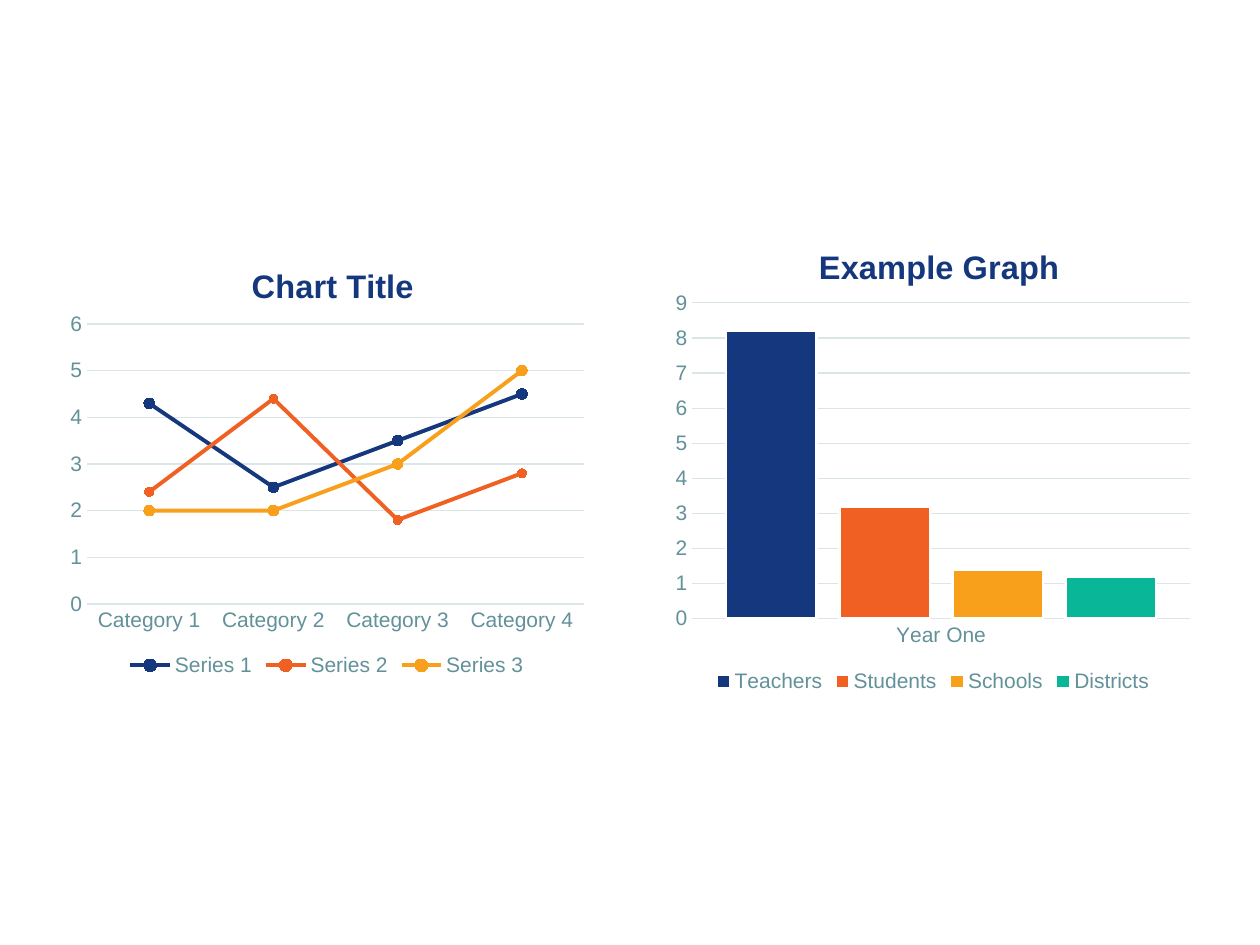
"""Builds a slide with a line chart and a column chart side by side."""
from lxml import etree
from pptx import Presentation
from pptx import util as u
from pptx.chart import data as cd
from pptx.dml import color as co
from pptx.enum import chart as ec
from pptx.oxml import ns

Pt = u.Pt
NAVY = co.RGBColor(0x14, 0x37, 0x7D)
ORANGE = co.RGBColor(0xF0, 0x60, 0x22)
AMBER = co.RGBColor(0xF8, 0x9F, 0x1B)
GREEN = co.RGBColor(0x09, 0xB6, 0x98)
TEAL = co.RGBColor(0x62, 0x91, 0x9A)
PALE = co.RGBColor(0xDB, 0xE6, 0xE8)
DARK = co.RGBColor(0x2C, 0x41, 0x45)
WHITE = co.RGBColor(0xFF, 0xFF, 0xFF)
HUES = [NAVY, ORANGE, AMBER, GREEN]


def style(font, size, hue, name="Arial", bold=False):
    font.size, font.name, font.bold = Pt(size), name, bold
    font.color.rgb = hue


def place(owner, index, pairs):
    layout = owner.find(ns.qn("c:layout"))
    if layout is None:
        layout = etree.Element(ns.qn("c:layout"))
        owner.insert(index, layout)
    manual = etree.SubElement(layout, ns.qn("c:manualLayout"))
    for tag, value in pairs:
        etree.SubElement(manual, ns.qn("c:" + tag)).set("val", str(value))


prs = Presentation()
prs.slide_width, prs.slide_height = Pt(720), Pt(540)
slide = prs.slides.add_slide(prs.slide_layouts[6])

LINE = ec.XL_CHART_TYPE.LINE_MARKERS
BAR = ec.XL_CHART_TYPE.COLUMN_CLUSTERED
charts = [
    (LINE, "Chart Title", (33.8, 132.5, 306, 257), (106.7, 15),
     (16, 52.7, 284, 160), 6,
     ["Category 1", "Category 2", "Category 3", "Category 4"],
     {"Series 1": [4.3, 2.5, 3.5, 4.5],
      "Series 2": [2.4, 4.4, 1.8, 2.8],
      "Series 3": [2, 2, 3, 5]}),
    (BAR, "Example Graph", (380.2, 123.8, 306, 275), (84.4, 13),
     (15.3, 49.3, 284.6, 180.6), 9,
     ["Year One"],
     {"Teachers": [8.2], "Students": [3.2],
      "Schools": [1.4], "Districts": [1.2]}),
]

for kind, name, box, head, inner, top, cats, rows in charts:
    data = cd.CategoryChartData()
    data.categories = cats
    for label, vals in rows.items():
        data.add_series(label, vals)
    frame = slide.shapes.add_chart(kind, *map(Pt, box), data)
    chart = frame.chart
    style(chart.font, 10, DARK, "Calibri")

    chart.has_title = True
    title = chart.chart_title
    title.text_frame.text = name
    style(title.text_frame.paragraphs[0].runs[0].font, 18.6, NAVY, bold=True)
    wide, high = box[2:]
    place(title._element, 1, [
        ("xMode", "edge"), ("yMode", "edge"),
        ("x", head[0] / wide), ("y", head[1] / high)])
    place(chart._chartSpace.chart.plotArea, 0, [
        ("layoutTarget", "inner"), ("xMode", "edge"), ("yMode", "edge"),
        ("x", inner[0] / wide), ("y", inner[1] / high),
        ("w", inner[2] / wide), ("h", inner[3] / high)])

    chart.has_legend = True
    chart.legend.position = ec.XL_LEGEND_POSITION.BOTTOM
    chart.legend.include_in_layout = False
    style(chart.legend.font, 12, TEAL)

    for axis in (chart.category_axis, chart.value_axis):
        axis.major_tick_mark = axis.minor_tick_mark = ec.XL_TICK_MARK.NONE
        style(axis.tick_labels.font, 12, TEAL)
    scale = chart.value_axis
    scale.minimum_scale, scale.maximum_scale, scale.major_unit = 0, top, 1
    scale.format.line.fill.background()
    scale.has_major_gridlines = True
    for line in (chart.category_axis.format.line,
                 scale.major_gridlines.format.line):
        line.color.rgb, line.width = PALE, Pt(0.75)

    plot = chart.plots[0]
    plot.vary_by_categories = False
    if kind == BAR:
        plot.gap_width, plot.overlap = 75, -25
    for i, (row, hue) in enumerate(zip(plot.series, HUES)):
        line = row.format.line
        if kind == BAR:
            row.format.fill.solid()
            row.format.fill.fore_color.rgb = hue
            line.color.rgb, line.width = WHITE, Pt(1.5)
            continue
        row.smooth = False
        line.color.rgb, line.width = hue, Pt(2.25)
        mark = row.marker
        mark.style = ec.XL_MARKER_STYLE.CIRCLE
        mark.size = 5 if i == 1 else 6
        mark.format.fill.solid()
        mark.format.fill.fore_color.rgb = hue
        mark.format.line.color.rgb = hue

prs.save("out.pptx")
